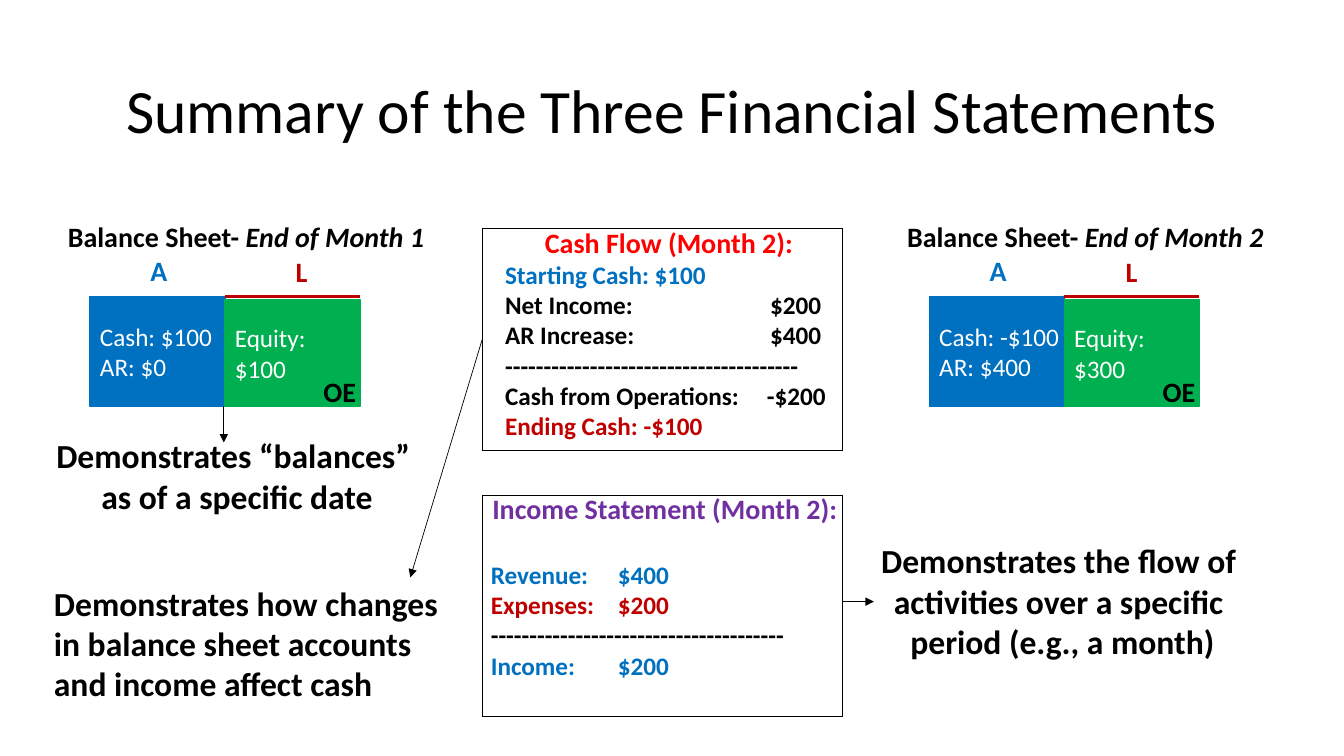
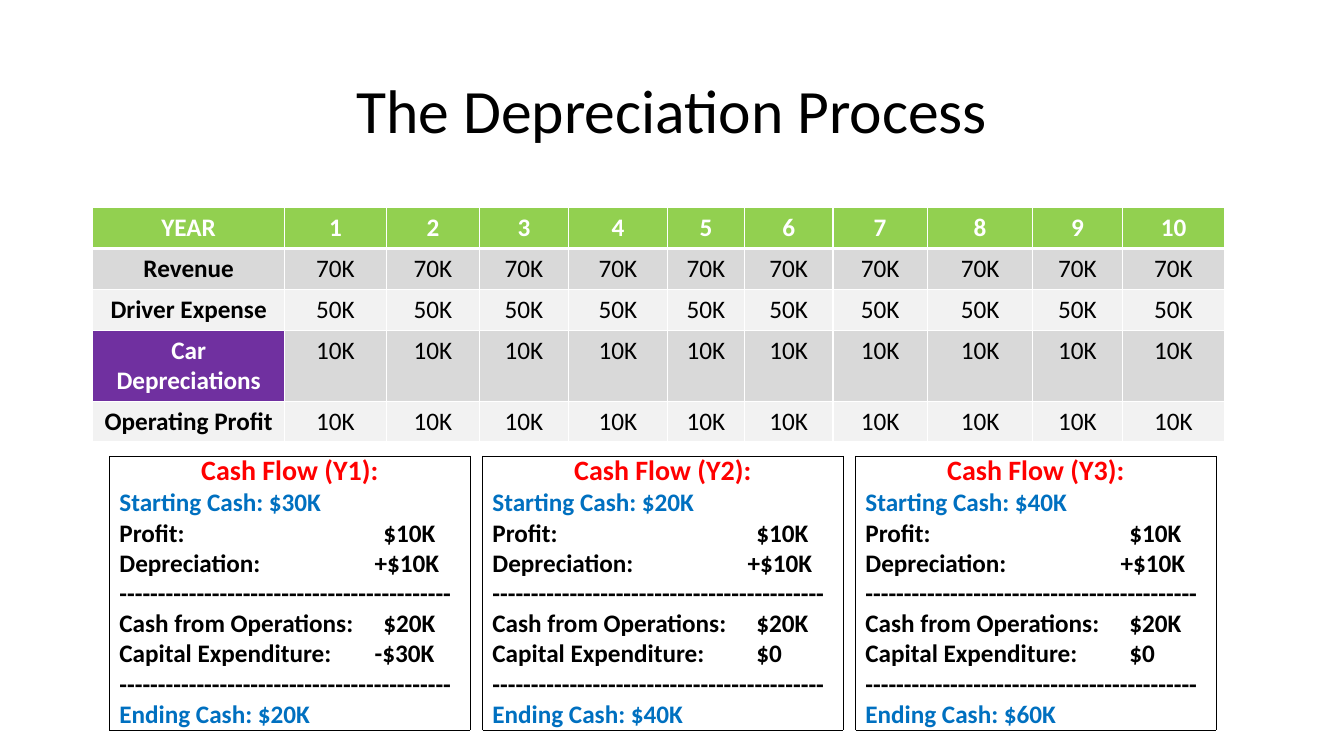
from lxml import etree
from pptx import Presentation
from pptx import util as u
from pptx.dml.color import RGBColor
from pptx.enum import shapes, text
from pptx.oxml import ns

Cm, Pt = u.Cm, u.Pt
CENTER, LEFT = text.PP_ALIGN.CENTER, text.PP_ALIGN.LEFT

BLACK = RGBColor(0x00, 0x00, 0x00)
WHITE = RGBColor(0xFF, 0xFF, 0xFF)
BLUE = RGBColor(0x00, 0x70, 0xC0)
GREEN = RGBColor(0x00, 0xB0, 0x50)
RED = RGBColor(0xFF, 0x00, 0x00)
DARK_RED = RGBColor(0xC0, 0x00, 0x00)
PURPLE = RGBColor(0x70, 0x30, 0xA0)
LIME = RGBColor(0x92, 0xD0, 0x50)
BAND_DARK = RGBColor(0xD9, 0xD9, 0xD9)
BAND_LIGHT = RGBColor(0xF2, 0xF2, 0xF2)


def add_run(para, words, size, colour, bold=True, italic=False):
    span = para.add_run()
    span.text = words
    font = span.font
    font.name, font.size, font.bold, font.italic = "Calibri", Pt(size), bold, italic
    font.color.rgb = colour


def add_box(page, left, top, width, height, wrap=False):
    box = page.shapes.add_textbox(Cm(left), Cm(top), Cm(width), Cm(height))
    box.text_frame.word_wrap = wrap
    return box.text_frame


deck = Presentation()
deck.slide_width, deck.slide_height = Cm(33.87), Cm(19.05)

# Pages and titles
pages = []
for title in ["Summary of the Three Financial Statements", "The Depreciation Process"]:
    page = deck.slides.add_slide(deck.slide_layouts[6])
    frame = add_box(page, 2.34, 1.02, 29.21, 3.68, wrap=True)
    frame.vertical_anchor = text.MSO_ANCHOR.MIDDLE
    para = frame.paragraphs[0]
    para.alignment, para.line_spacing = CENTER, 0.9
    add_run(para, title, 44, BLACK, bold=False)
    pages.append(page)
summary, depreciation = pages

# Balance sheets
SHEET_TOP, HALF = 7.47, 3.4
lines = []  # page, start, end, colour, weight, arrow
sheets = [
    (2.27, 4.93, "End of Month 1", ["Cash: $100", "AR: $0"], "Equity: $100"),
    (23.42, 4.7, "End of Month 2", ["Cash: -$100", "AR: $400"], "Equity: $300"),
]
for left, liability_shift, period, assets, equity in sheets:
    middle = left + HALF
    halves = [
        (left, SHEET_TOP, 2.77, BLUE, assets),
        (middle, SHEET_TOP + 0.08, 2.69, GREEN, [equity]),
    ]
    for x, y, height, colour, entries in halves:
        half = summary.shapes.add_shape(
            shapes.MSO_SHAPE.RECTANGLE, Cm(x), Cm(y), Cm(HALF), Cm(height))
        half.shadow.inherit = False
        half.fill.solid()
        half.fill.fore_color.rgb = half.line.color.rgb = colour
        half.line.width = Pt(1)
        frame = half.text_frame
        frame.word_wrap, frame.margin_right = True, 0
        frame.vertical_anchor = text.MSO_ANCHOR.MIDDLE
        for i, entry in enumerate(entries):
            para = frame.add_paragraph() if i else frame.paragraphs[0]
            para.alignment = LEFT
            add_run(para, entry, 18, WHITE, bold=False)
    lines.append((summary, (middle, SHEET_TOP), (middle + HALF, SHEET_TOP), DARK_RED, 2, False))

    labels = [
        (left + 1.27, 6.27, 0.94, "A", BLUE),
        (left + liability_shift, 6.3, 0.81, "L", DARK_RED),
        (left + 5.63, 9.32, 1.35, "OE", BLACK),
    ]
    for x, y, width, letters, colour in labels:
        add_run(add_box(summary, x, y, width, 1.12).paragraphs[0], letters, 20, colour)
    para = add_box(summary, left - 0.81, 5.4, 9.63, 1.12).paragraphs[0]
    add_run(para, "Balance Sheet- ", 20, BLACK)
    add_run(para, period, 20, BLACK, italic=True)

# Statement cards on both pages
# page, frame left, top and height, text left and width, value tab, signed value tab,
# heading, its colour, gap after it, rows
CARD_WIDTH = 9.09
SHORT_RULE, LONG_RULE = "-" * 38, "-" * 43
cards = [
    (summary, 12.15, 5.76, 5.59, 12.48, 8.76, 6.68, 6.6, "Cash Flow (Month 2):", RED, 0, [
        ("Starting Cash: $100", BLUE),
        ("Net Income:\t$200", BLACK),
        ("AR Increase:\t$400", BLACK),
        (SHORT_RULE, BLACK),
        ("Cash from Operations:\t-$200", BLACK),
        ("Ending Cash: -$100", DARK_RED),
    ]),
    (summary, 12.15, 12.47, 5.57, 12.12, 9.27, 3.2, 3.2, "Income Statement (Month 2):", PURPLE, 24, [
        ("Revenue:\t$400", BLUE),
        ("Expenses:\t$200", DARK_RED),
        (SHORT_RULE, BLACK),
        ("Income:\t$200", BLUE),
    ]),
]
years = [("$30K", "-$30K", "$20K"), ("$20K", "$0", "$40K"), ("$40K", "$0", "$60K")]
for i, (start, spent, end) in enumerate(years):
    left = 2.76 + 9.4 * i
    cards.append((
        depreciation, left, 11.49, 6.91, left, CARD_WIDTH, 6.65, 6.43, f"Cash Flow (Y{i + 1}):", RED, 0, [
            (f"Starting Cash: {start}", BLUE),
            ("Profit:\t$10K", BLACK),
            ("Depreciation:\t+$10K", BLACK),
            (LONG_RULE, BLACK),
            ("Cash from Operations:\t$20K", BLACK),
            (f"Capital Expenditure:\t{spent}", BLACK),
            (LONG_RULE, BLACK),
            (f"Ending Cash: {end}", BLUE),
        ]))

for (page, left, top, height, text_left, text_width, tab, signed_tab,
     heading, colour, gap, rows) in cards:
    right, bottom = left + CARD_WIDTH, top + height
    edges = [
        ((left, top), (right, top)),
        ((right, top), (right, bottom)),
        ((left, top), (left, bottom)),
        ((left, bottom), (right, bottom)),
    ]
    lines += [(page, start, end, BLACK, 0.5, False) for start, end in edges]

    frame = add_box(page, text_left, top - 0.2, text_width, height + 0.9, wrap=True)
    para = frame.paragraphs[0]
    para.alignment, para.space_after = CENTER, Pt(gap)
    add_run(para, heading, 20, colour)
    for row, row_colour in rows:
        para = frame.add_paragraph()
        add_run(para, row, 18, row_colour)
        value = row.partition("\t")[2]
        if value:
            stop = signed_tab if value[0] in "+-" else tab
            tabs = etree.SubElement(para._p.get_or_add_pPr(), ns.qn("a:tabLst"))
            etree.SubElement(tabs, ns.qn("a:tab"), pos=str(Cm(stop)), algn="l")

# Explanations
notes = [
    (21.9, 13.49, 9.75, 3.33, CENTER,
     ["Demonstrates the flow of ", "activities over a specific ", "period (e.g., a month)"]),
    (1.11, 10.84, 9.73, 2.31, CENTER, ["Demonstrates “balances” ", "as of a specific date"]),
    (1.11, 14.56, 10.49, 3.33, LEFT,
     ["Demonstrates how changes", "in balance sheet accounts", "and income affect cash"]),
]
for left, top, width, height, align, phrases in notes:
    frame = add_box(summary, left, top, width, height)
    para = frame.paragraphs[0]
    para.alignment = align
    for i, phrase in enumerate(phrases):
        if i and align == LEFT:
            para = frame.add_paragraph()
        elif i:
            para.add_line_break()
        add_run(para, phrase, 24, BLACK)

# Liability lines, card edges and arrows
arrows = [
    ((12.15, 8.56), (10.34, 14.55)),
    ((5.64, 10.24), (5.64, 11.15)),
    ((21.21, 15.16), (22.02, 15.16)),
]
lines += [(summary, start, end, BLACK, 0.5, True) for start, end in arrows]
for page, start, end, colour, weight, arrow in lines:
    line = page.shapes.add_connector(
        shapes.MSO_CONNECTOR.STRAIGHT, *(Cm(length) for length in start + end))
    line.line.color.rgb, line.line.width = colour, Pt(weight)
    if arrow:
        etree.SubElement(line.line._get_or_add_ln(), ns.qn("a:tailEnd"), type="triangle")
    etree.SubElement(line._element.spPr, ns.qn("a:effectLst"))

# Depreciation table
widths = [4.83, 2.57, 2.34, 2.25, 2.49, 1.94, 2.23, 2.38, 2.66, 2.25, 2.59]
records = [
    ("YEAR", [str(year) for year in range(1, 11)], 1.03, LIME),
    ("Revenue", ["70K"] * 10, 1.03, BAND_DARK),
    ("Driver Expense", ["50K"] * 10, 1.03, BAND_LIGHT),
    ("Car Depreciations", ["10K"] * 10, 1.79, BAND_DARK),
    ("Operating Profit", ["10K"] * 10, 1.03, BAND_LIGHT),
]
table = depreciation.shapes.add_table(
    len(records), len(widths), Cm(2.34), Cm(5.23), Cm(sum(widths)), Cm(5.91)).table
table.horz_banding = False
for column, width in zip(table.columns, widths):
    column.width = Cm(width)
for r, (name, values, height, band) in enumerate(records):
    table.rows[r].height = Cm(height)
    for c, words in enumerate([name] + values):
        highlight = name == "Car Depreciations" and c == 0
        cell = table.cell(r, c)
        cell.fill.solid()
        cell.fill.fore_color.rgb = PURPLE if highlight else band
        para = cell.text_frame.paragraphs[0]
        para.alignment = CENTER
        add_run(para, words, 18, WHITE if r == 0 or highlight else BLACK, bold=r == 0 or c == 0)
        for i, side in enumerate("LRTB"):
            thick = (r, side) in ((0, "B"), (1, "T"))
            edge = etree.Element(ns.qn(f"a:ln{side}"), w=str(Pt(3 if thick else 1)))
            paint = etree.SubElement(edge, ns.qn("a:solidFill"))
            etree.SubElement(paint, ns.qn("a:srgbClr"), val=str(WHITE))
            cell._tc.get_or_add_tcPr().insert(i, edge)

deck.save("out.pptx")
